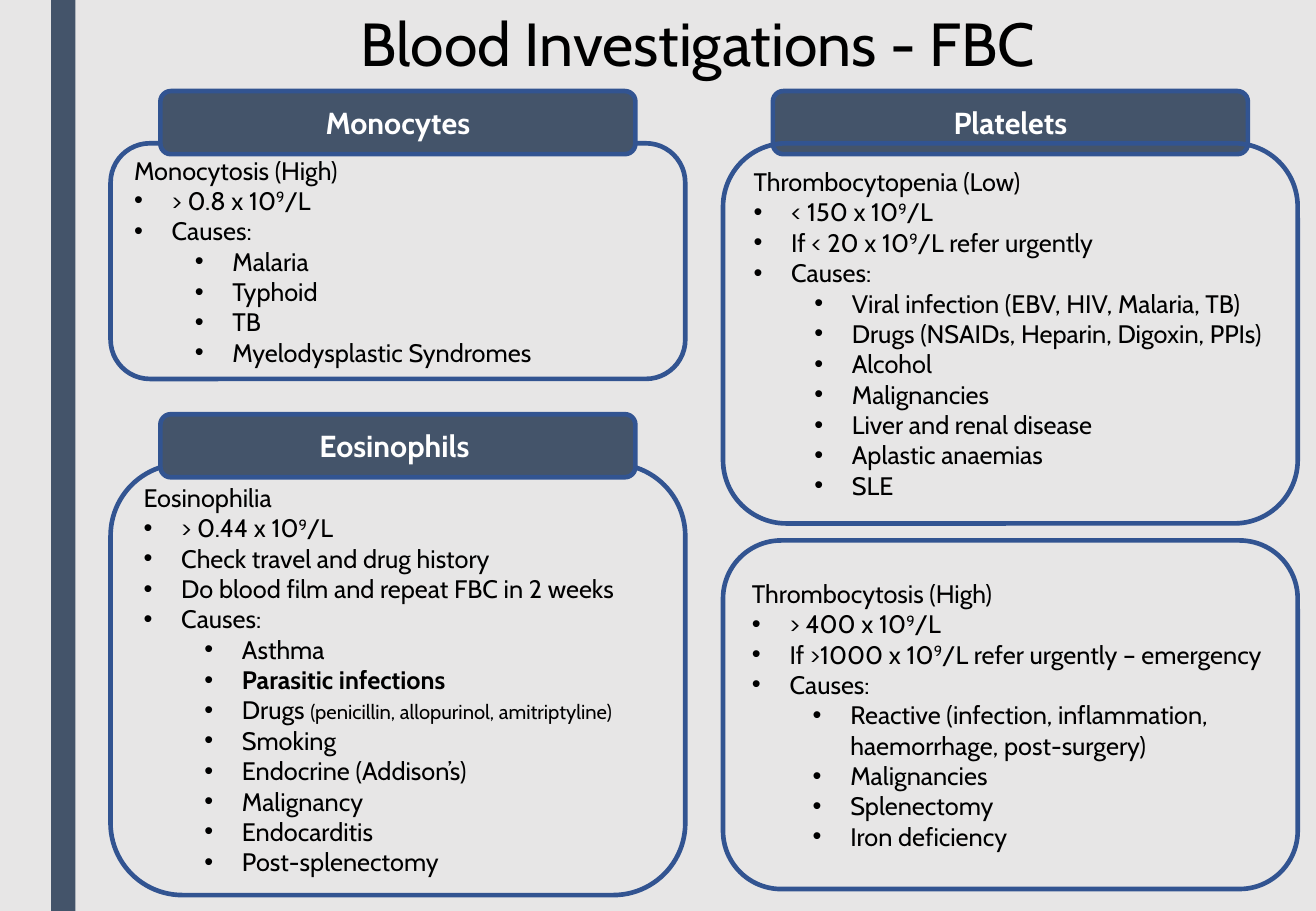
from dataclasses import dataclass
from typing import NamedTuple

from lxml.etree import SubElement
from pptx import Presentation
from pptx.dml.color import RGBColor
from pptx.enum.shapes import MSO_SHAPE
from pptx.enum.text import MSO_ANCHOR, MSO_AUTO_SIZE, PP_ALIGN
from pptx.oxml.ns import qn
from pptx.util import Inches, Pt

WIDTH, HEIGHT = 10.83, 7.5
SLATE, BLUE, BLACK, WHITE, GREY = "44546A", "325491", "000000", "FFFFFF", "E7E6E6"
FONT = "Cabin"
COLUMN_LEFT, COLUMN_STEP, COLUMN_WIDTH = 8.4, 46.54, 43.67
HEADER_INDENT, HEADER_WIDTH, HEADER_HEIGHT = 3.79, 36.1, 6.93
HANGING, NESTED = 0.31, 0.81


class Span(NamedTuple):
    text: str
    size: float = 15
    bold: bool = False
    raised: bool = False


@dataclass
class Header:
    text: str
    column: int
    top: float


@dataclass
class Panel:
    column: int
    top: float
    height: float
    finding: str
    facts: list[list[Span]]
    causes: list[list[Span]]


def lines(*texts: str) -> list[list[Span]]:
    return [[Span(text)] for text in texts]


def count(limit: str, advice: str = "") -> list[Span]:
    return [Span(f"{limit} x 10"), Span("9", raised=True), Span(f"/L{advice}")]


def colour(code: str) -> RGBColor:
    return RGBColor.from_string(code)


def place(left: float, top: float, width: float, height: float) -> list[int]:
    return [Inches(share * side / 100) for share, side in
            ((left, WIDTH), (top, HEIGHT), (width, WIDTH), (height, HEIGHT))]


def column_left(column: int) -> float:
    return COLUMN_LEFT + column * COLUMN_STEP


def add_text(para, text: str, *, size: float = 15, bold: bool = False,
             raised: bool = False, ink: str = BLACK) -> None:
    span = para.add_run()
    span.text = text
    span.font.name = FONT
    span.font.size = Pt(size)
    span.font.bold = bold
    span.font.color.rgb = colour(ink)
    if raised:
        span.font._element.set("baseline", "30000")


def add_bullet(para, margin: float) -> None:
    properties = para._p.get_or_add_pPr()
    properties.set("marL", str(Inches(margin)))
    properties.set("indent", str(-Inches(HANGING)))
    SubElement(properties, qn("a:buFont")).set("typeface", "Arial")
    SubElement(properties, qn("a:buChar")).set("char", "•")


def add_box(page, kind: MSO_SHAPE, area: list[int], fill: str = "", line: str = ""):
    box = page.shapes.add_shape(kind, *area)
    box.shadow.inherit = False
    if fill:
        box.fill.solid()
        box.fill.fore_color.rgb = colour(fill)
    else:
        box.fill.background()
    if line:
        box.line.color.rgb = colour(line)
        box.line.width = Pt(2.75)
    else:
        box.line.fill.background()
    box.text_frame.vertical_anchor = MSO_ANCHOR.MIDDLE
    return box


def add_header(page, header: Header) -> None:
    area = place(column_left(header.column) + HEADER_INDENT, header.top,
                 HEADER_WIDTH, HEADER_HEIGHT)
    box = add_box(page, MSO_SHAPE.ROUNDED_RECTANGLE, area, SLATE, BLUE)
    para = box.text_frame.paragraphs[0]
    para.alignment = PP_ALIGN.CENTER
    add_text(para, header.text, size=18, bold=True, ink=WHITE)


def add_panel(page, panel: Panel) -> None:
    area = place(column_left(panel.column), panel.top, COLUMN_WIDTH, panel.height)
    box = add_box(page, MSO_SHAPE.ROUNDED_RECTANGLE, area, line=BLUE)
    rows = [(0, [Span(panel.finding)])]
    rows += [(HANGING, fact) for fact in panel.facts + lines("Causes:")]
    rows += [(NESTED, cause) for cause in panel.causes]
    for index, (margin, spans) in enumerate(rows):
        para = box.text_frame.add_paragraph() if index else box.text_frame.paragraphs[0]
        para.alignment = PP_ALIGN.LEFT
        if margin:
            para.level = int(margin == NESTED)
            add_bullet(para, margin)
        for span in spans:
            add_text(para, span.text, size=span.size, bold=span.bold, raised=span.raised)


def add_title(page, text: str) -> None:
    title = page.shapes.title
    title.left, title.top, title.width, title.height = place(6.09, 0, 93.91, 9.47)
    frame = title.text_frame
    frame.auto_size = MSO_AUTO_SIZE.NONE
    frame.word_wrap = True
    frame.vertical_anchor = MSO_ANCHOR.TOP
    para = frame.paragraphs[0]
    para.alignment = PP_ALIGN.CENTER
    add_text(para, text, size=36)


CONTENT = [
    Panel(0, 15.73, 25.87, "Monocytosis (High)", [count("> 0.8")],
          lines("Malaria", "Typhoid", "TB", "Myelodysplastic Syndromes")),
    Header("Monocytes", 0, 10),
    Panel(0, 50.93, 47.33, "Eosinophilia",
          [count("> 0.44"), *lines("Check travel and drug history",
                                   "Do blood film and repeat FBC in 2 weeks")],
          [*lines("Asthma"),
           [Span("Parasitic infections", bold=True)],
           [Span("Drugs "), Span("(penicillin, allopurinol, amitriptyline)", size=12)],
           *lines("Smoking", "Endocrine (Addison’s)", "Malignancy", "Endocarditis",
                  "Post-splenectomy")]),
    Header("Eosinophils ", 0, 45.47),
    Header("Platelets", 1, 10),
    Panel(1, 15.73, 41.73, "Thrombocytopenia (Low)",
          [count("< 150"), count("If < 20", " refer urgently")],
          lines("Viral infection (EBV, HIV, Malaria, TB)",
                "Drugs (NSAIDs, Heparin, Digoxin, PPIs)", "Alcohol", "Malignancies",
                "Liver and renal disease", "Aplastic anaemias", "SLE")),
    Panel(1, 59.33, 38.27, "Thrombocytosis (High)",
          [count("> 400"), count("If >1000", " refer urgently – emergency")],
          lines("Reactive (infection, inflammation, haemorrhage, post-surgery)",
                "Malignancies", "Splenectomy", "Iron deficiency")),
]


def main() -> None:
    deck = Presentation()
    deck.slide_width, deck.slide_height = Inches(WIDTH), Inches(HEIGHT)
    page = deck.slides.add_slide(deck.slide_layouts[5])
    page.background.fill.solid()
    page.background.fill.fore_color.rgb = colour(GREY)
    add_box(page, MSO_SHAPE.RECTANGLE, place(3.88, 0, 1.85, 100), SLATE)
    add_title(page, "Blood Investigations - FBC")
    for item in CONTENT:
        if isinstance(item, Header):
            add_header(page, item)
        else:
            add_panel(page, item)
    deck.save("out.pptx")


if __name__ == "__main__":
    main()
